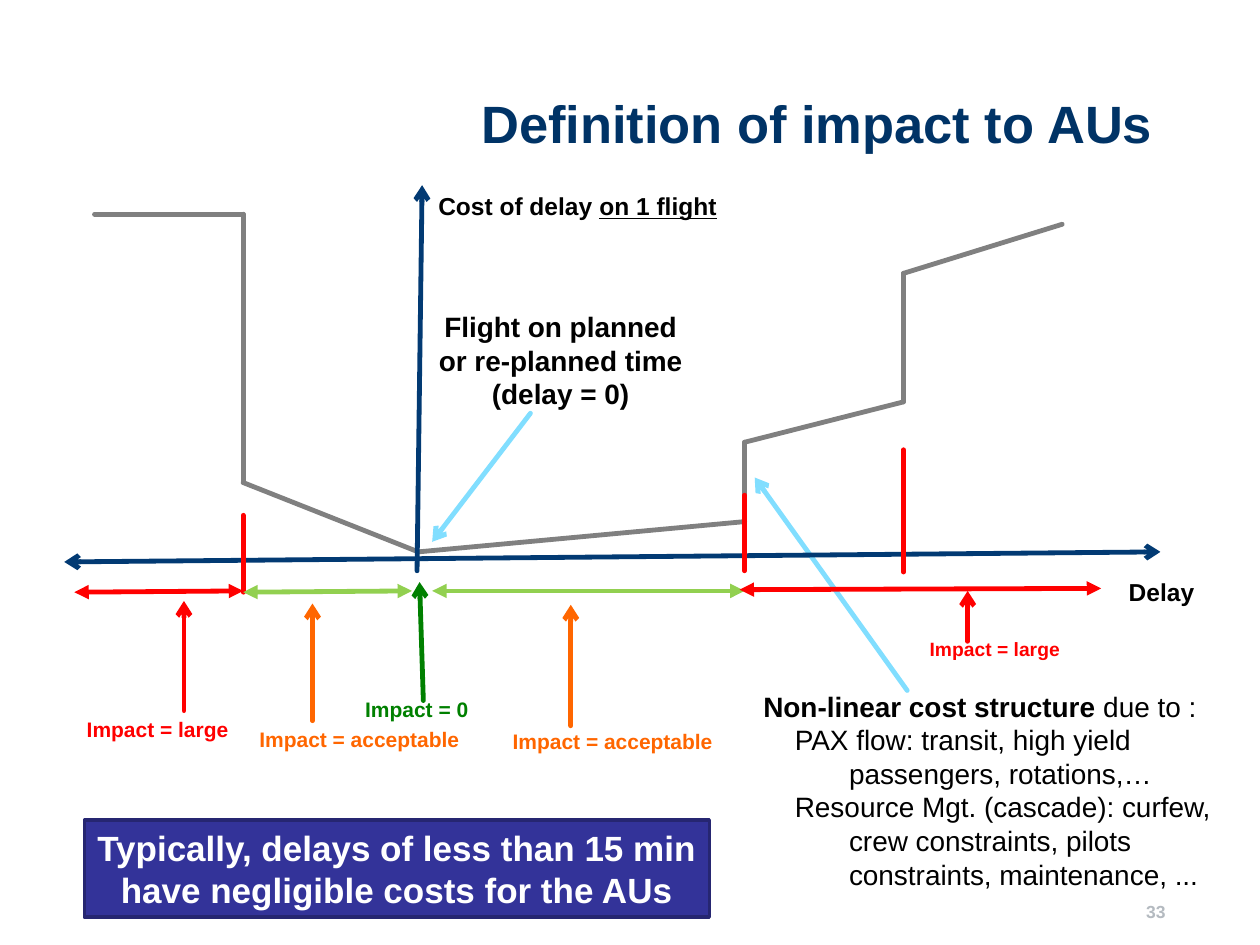
"""Build the slide that defines the impact of delay to AUs."""
from itertools import pairwise

from lxml.etree import SubElement
from pptx import Presentation
from pptx.dml.color import RGBColor
from pptx.enum.shapes import MSO_CONNECTOR, MSO_SHAPE
from pptx.enum.text import MSO_ANCHOR as ANCHOR, PP_ALIGN as ALIGN
from pptx.oxml.ns import qn
from pptx.util import Inches, Pt

COLORS = {
    "title": "003366", "number": "B4BAC0", "text": "000000", "white": "FFFFFF",
    "axis": "023A73", "curve": "808080", "callout": "81DEFF",
    "large": "FF0000", "acceptable": "FF6600", "zero": "008000", "range": "92D050",
    "box": "333399", "box_line": "262671",
}


def add_line(start, end, color, head=None, tail=None):
    line = slide.shapes.add_connector(MSO_CONNECTOR.STRAIGHT, *map(Inches, start + end))
    line.line.color.rgb = RGBColor.from_string(COLORS[color])
    line.line.width = Pt(2.75)
    outline = line.line._ln
    outline.set("cap", "rnd")
    SubElement(outline, qn("a:round"))
    for tag, arrow in (("a:headEnd", head), ("a:tailEnd", tail)):
        if arrow:
            SubElement(outline, qn(tag), type=arrow)
    SubElement(line._element.spPr, qn("a:effectLst"))


def write_text(shape, lines, size, color, bold=True, align=ALIGN.LEFT, wrap=False, anchor=ANCHOR.TOP):
    frame = shape.text_frame
    frame.word_wrap = wrap
    frame.vertical_anchor = anchor
    frame.text = "\n".join(lines)
    for paragraph in frame.paragraphs:
        paragraph.alignment = align
        font = paragraph.font
        font.name, font.size, font.bold = "Arial", Pt(size), bold
        font.color.rgb = RGBColor.from_string(COLORS[color])
    return frame


presentation = Presentation()
presentation.slide_width, presentation.slide_height = Inches(10), Inches(7.5)
slide = presentation.slides.add_slide(presentation.slide_layouts[5])

title = slide.shapes.title
title.left, title.top, title.width, title.height = map(Inches, (1.69, 0.67, 7.56, 1.25))
write_text(title, ["Definition of impact to AUs"], 30, "title", align=ALIGN.RIGHT, wrap=True)

number = slide.shapes.add_textbox(*map(Inches, (7.17, 6.87, 2.08, 0.5)))
write_text(number, ["33"], 10, "number", align=ALIGN.RIGHT, wrap=True, anchor=ANCHOR.BOTTOM)
number.text_frame.margin_right = 0

add_line((5.99, 3.79), (7.2, 5.48), "callout", "arrow")
add_line((3.43, 4.3), (4.21, 3.28), "callout", "arrow")

cost_curve = [
    (0.75, 1.7), (1.93, 1.7), (1.93, 3.83), (3.32, 4.38), (5.91, 4.14),
    (5.91, 3.51), (7.17, 3.19), (7.17, 2.17), (8.43, 1.78),
]
for start, end in pairwise(cost_curve):
    add_line(start, end, "curve")

add_line((3.35, 1.47), (3.31, 4.53), "axis", "arrow")
add_line((0.51, 4.46), (9.21, 4.38), "axis", "arrow", "arrow")

for x, top, bottom in ((1.93, 4.09, 4.7), (5.91, 3.93, 4.53), (7.17, 3.57, 4.54)):
    add_line((x, top), (x, bottom), "large")

for start, end, color in (
    ((3.43, 4.69), (5.91, 4.69), "range"),
    ((1.93, 4.7), (3.27, 4.69), "range"),
    ((0.59, 4.7), (1.93, 4.69), "large"),
    ((5.87, 4.68), (8.74, 4.67), "large"),
):
    add_line(start, end, color, "triangle", "triangle")

impacts = [
    ("Impact = large", "large", 12, (1.46, 4.77), (1.46, 5.64), (0.59, 5.64, 1.34, 0.3)),
    ("Impact = acceptable", "acceptable", 12, (2.48, 4.79), (2.48, 5.72), (1.96, 5.72, 1.81, 0.3)),
    ("Impact = 0", "zero", 12, (3.33, 4.62), (3.36, 5.56), (2.8, 5.48, 1.03, 0.3)),
    ("Impact = acceptable", "acceptable", 12, (4.53, 4.8), (4.53, 5.76), (3.97, 5.73, 1.81, 0.3)),
    ("Impact = large", "large", 11, (7.68, 4.69), (7.68, 5.09), (7.28, 5.01, 1.24, 0.29)),
]
for label, color, size, tip, end, box in impacts:
    add_line(tip, end, color, "arrow")
    write_text(slide.shapes.add_textbox(*map(Inches, box)), [label], size, color)

cost_label = slide.shapes.add_textbox(*map(Inches, (3.38, 1.47, 2.49, 0.34)))
frame = write_text(cost_label, ["Cost of delay "], 14, "text")
underlined = frame.paragraphs[0].add_run()
underlined.text = "on 1 flight"
underlined.font.underline = True

delay_label = slide.shapes.add_textbox(*map(Inches, (8.86, 4.53, 0.72, 0.34)))
write_text(delay_label, ["Delay"], 14, "text")

on_time = slide.shapes.add_textbox(*map(Inches, (3.35, 2.41, 2.2, 0.91)))
write_text(on_time, ["Flight on planned or re-planned time", "(delay = 0)"], 16, "text",
           align=ALIGN.CENTER, wrap=True)

reasons = slide.shapes.add_textbox(*map(Inches, (5.96, 5.42, 4.02, 1.72)))
frame = write_text(reasons, [
    "Non-linear cost structure ",
    "PAX flow: transit, high yield passengers, rotations,…",
    "Resource Mgt. (cascade): curfew, crew constraints, pilots constraints, maintenance, ...",
], 16, "text", bold=False, wrap=True)
heading, *items = frame.paragraphs
heading.runs[0].font.bold = True
heading.add_run().text = "due to :"
for paragraph in items:
    properties = paragraph._p.get_or_add_pPr()
    properties.set("marL", str(Inches(0.68)))
    properties.set("indent", str(Inches(-0.43)))

summary = slide.shapes.add_shape(MSO_SHAPE.RECTANGLE, *map(Inches, (0.67, 6.51, 4.96, 0.77)))
summary.shadow.inherit = False
summary.fill.solid()
summary.fill.fore_color.rgb = RGBColor.from_string(COLORS["box"])
summary.line.color.rgb = RGBColor.from_string(COLORS["box_line"])
summary.line.width = Pt(2)
write_text(summary, ["Typically, delays of less than 15 min have negligible costs for the AUs"],
           20, "white", align=ALIGN.CENTER, wrap=True, anchor=ANCHOR.MIDDLE)

presentation.save("out.pptx")
